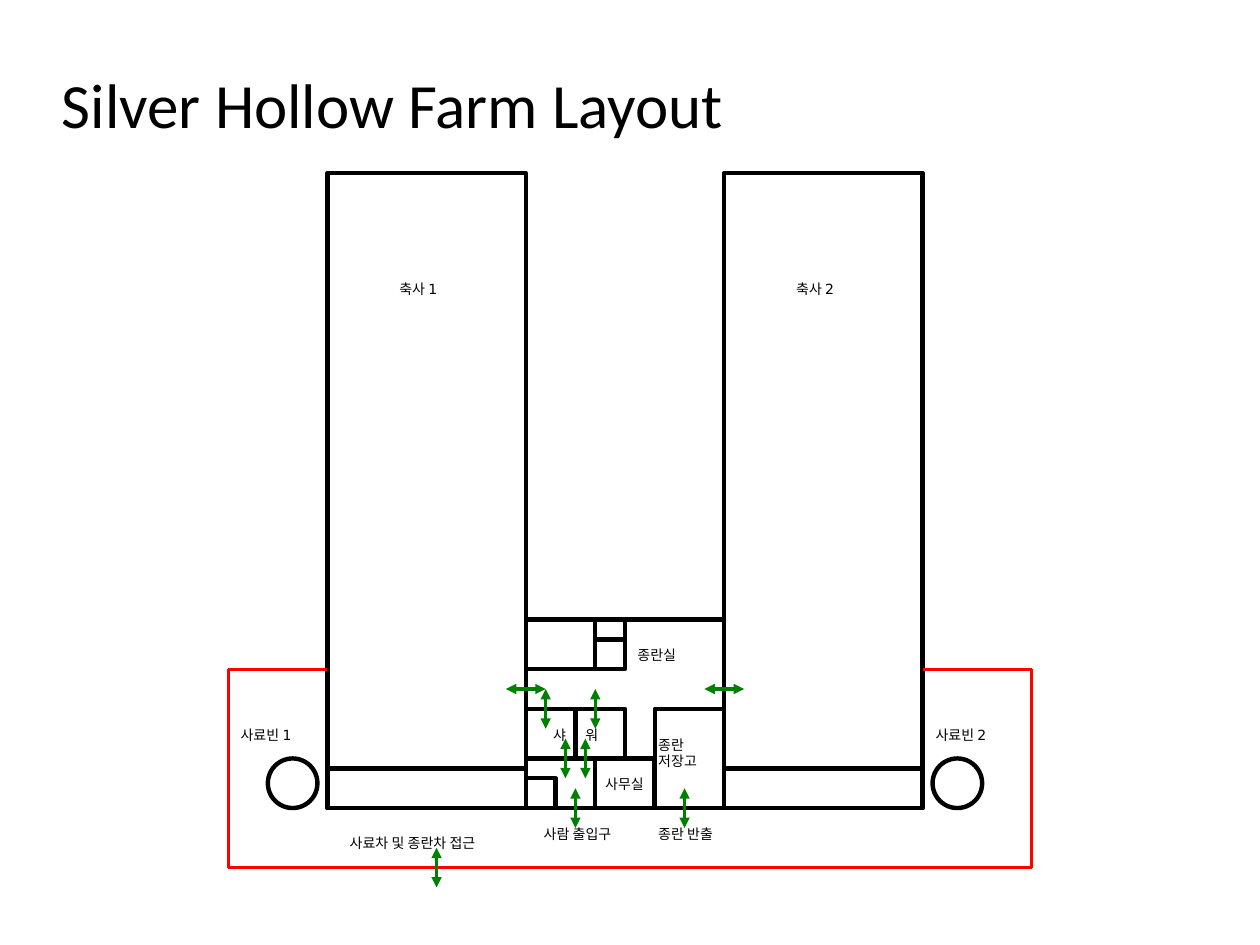
from itertools import pairwise

from lxml import etree
from pptx import Presentation
from pptx.dml.color import RGBColor
from pptx.enum.shapes import MSO_CONNECTOR, MSO_SHAPE
from pptx.oxml.ns import qn
from pptx.util import Cm, Pt

RECTANGLE, OVAL = MSO_SHAPE.RECTANGLE, MSO_SHAPE.OVAL
STRAIGHT = MSO_CONNECTOR.STRAIGHT
BLACK = RGBColor(0x00, 0x00, 0x00)
RED = RGBColor(0xFF, 0x00, 0x00)
GREEN = RGBColor(0x00, 0x80, 0x00)

TITLE = "Silver Hollow Farm Layout"

# Plan coordinates are in cm from the top left corner of house 1
PLAN_LEFT, PLAN_TOP = 6.6, 3.49
HOUSE_WIDTH, BOTTOM = 4, 12.8

# Rooms: left, top, right, bottom
HOUSES = [(x, 0, x + HOUSE_WIDTH, BOTTOM) for x in (0, 8)]
HOUSE_ENDS = [(x, 12, x + HOUSE_WIDTH, BOTTOM) for x in (0, 8)]
CENTRE_ROOMS = [
    (4, 9, 8, BOTTOM),
    (4, 12.2, 4.6, BOTTOM),
    (5.4, 9, 6, 9.4),
    (4, 9, 5.4, 10),
    (5.4, 9.4, 6, 10),
    (6.6, 10.8, 8, BOTTOM),
    (4, 10.8, 5, 11.8),
    (5, 10.8, 6, 11.8),
    (5.4, 11.8, 6.6, BOTTOM),
]
FEED_BINS = [(x, 11.8, x + 1, BOTTOM) for x in (-1.2, 12.2)]
FENCE = [(0, 10), (-2, 10), (-2, 14), (14.2, 14), (14.2, 10), (12, 10)]

# Passages: centre of each two-way arrow
ARROW_LENGTH = 0.8
VERTICAL_PASSAGES = [(2.2, 14), (5, 12.8), (7.2, 12.8), (5.4, 10.8),
                     (4.4, 10.8), (4.8, 11.8), (5.2, 11.8)]
HORIZONTAL_PASSAGES = [(8, 10.4), (4, 10.4)]

# Labels: left, top, width, lines
LABELS = [
    (9.45, 2.16, 1.3, ["축사 2"]),
    (1.45, 2.16, 1.3, ["축사 1"]),
    (5.6, 12.14, 1, ["사무실"]),
    (6.67, 13.15, 1.6, ["종란 반출"]),
    (4.36, 13.15, 2, ["사람 출입구"]),
    (0.45, 13.34, 3.7, ["사료차 및 종란차 접근"]),
    (-1.75, 11.15, 1.6, ["사료빈 1"]),
    (12.26, 11.15, 1.6, ["사료빈 2"]),
    (4.55, 11.15, 1.3, ["샤\t워"]),
    (6.67, 11.35, 2, ["종란", "저장고"]),
    (6.25, 9.55, 1.5, ["종란실"]),
]
SHOWER_TAB = 0.65


def on_plan(x, y):
    return Cm(PLAN_LEFT + x), Cm(PLAN_TOP + y)


def add_outline(slide, preset, left, top, right, bottom):
    outline = slide.shapes.add_shape(
        preset, *on_plan(left, top), Cm(right - left), Cm(bottom - top))
    outline.shadow.inherit = False
    outline.fill.background()
    outline.line.color.rgb = BLACK
    outline.line.width = Pt(2.52)


def add_line(slide, start, end, color, width, two_way=False):
    line = slide.shapes.add_connector(STRAIGHT, *on_plan(*start), *on_plan(*end))
    line.line.color.rgb = color
    line.line.width = Pt(width)
    if two_way:
        ln = line.line._get_or_add_ln()
        for end_tag in ("a:headEnd", "a:tailEnd"):
            etree.SubElement(ln, qn(end_tag), type="triangle")
    etree.SubElement(line._element.spPr, qn("a:effectLst"))


def add_text(slide, left, top, width, height, lines, font_name, size):
    frame = slide.shapes.add_textbox(left, top, width, height).text_frame
    frame.word_wrap = True
    frame.margin_left = frame.margin_right = 0
    frame.margin_top = frame.margin_bottom = 0
    for i, text in enumerate(lines):
        paragraph = frame.add_paragraph() if i else frame.paragraphs[0]
        paragraph.add_run().text = text
        if "\t" in text:
            tabs = etree.SubElement(paragraph._p.get_or_add_pPr(), qn("a:tabLst"))
            etree.SubElement(tabs, qn("a:tab"), pos=str(Cm(SHOWER_TAB)), algn="l")
        paragraph.font.name = font_name
        paragraph.font.size = Pt(size)
        paragraph.font.color.rgb = BLACK


def main():
    prs = Presentation()
    prs.slide_width, prs.slide_height = Cm(25.4), Cm(19.05)
    slide = prs.slides.add_slide(prs.slide_layouts[6])

    # Title
    add_text(slide, Cm(1.25), Cm(1.32), Cm(22.96), Cm(1.27),
             [TITLE], "Calibri", 36)

    # Buildings, feed bins and fence
    for room in HOUSES + HOUSE_ENDS + CENTRE_ROOMS:
        add_outline(slide, RECTANGLE, *room)
    for feed_bin in FEED_BINS:
        add_outline(slide, OVAL, *feed_bin)
    for start, end in pairwise(FENCE):
        add_line(slide, start, end, RED, 1.56)

    # Passages
    half = ARROW_LENGTH / 2
    for x, y in VERTICAL_PASSAGES:
        add_line(slide, (x, y - half), (x, y + half), GREEN, 1.9, two_way=True)
    for x, y in HORIZONTAL_PASSAGES:
        add_line(slide, (x - half, y), (x + half, y), GREEN, 1.9, two_way=True)

    # Labels
    for left, top, width, lines in LABELS:
        add_text(slide, *on_plan(left, top), Cm(width), Cm(0.34 * len(lines)),
                 lines, "DejaVu Sans", 8)

    prs.save("out.pptx")


if __name__ == "__main__":
    main()
